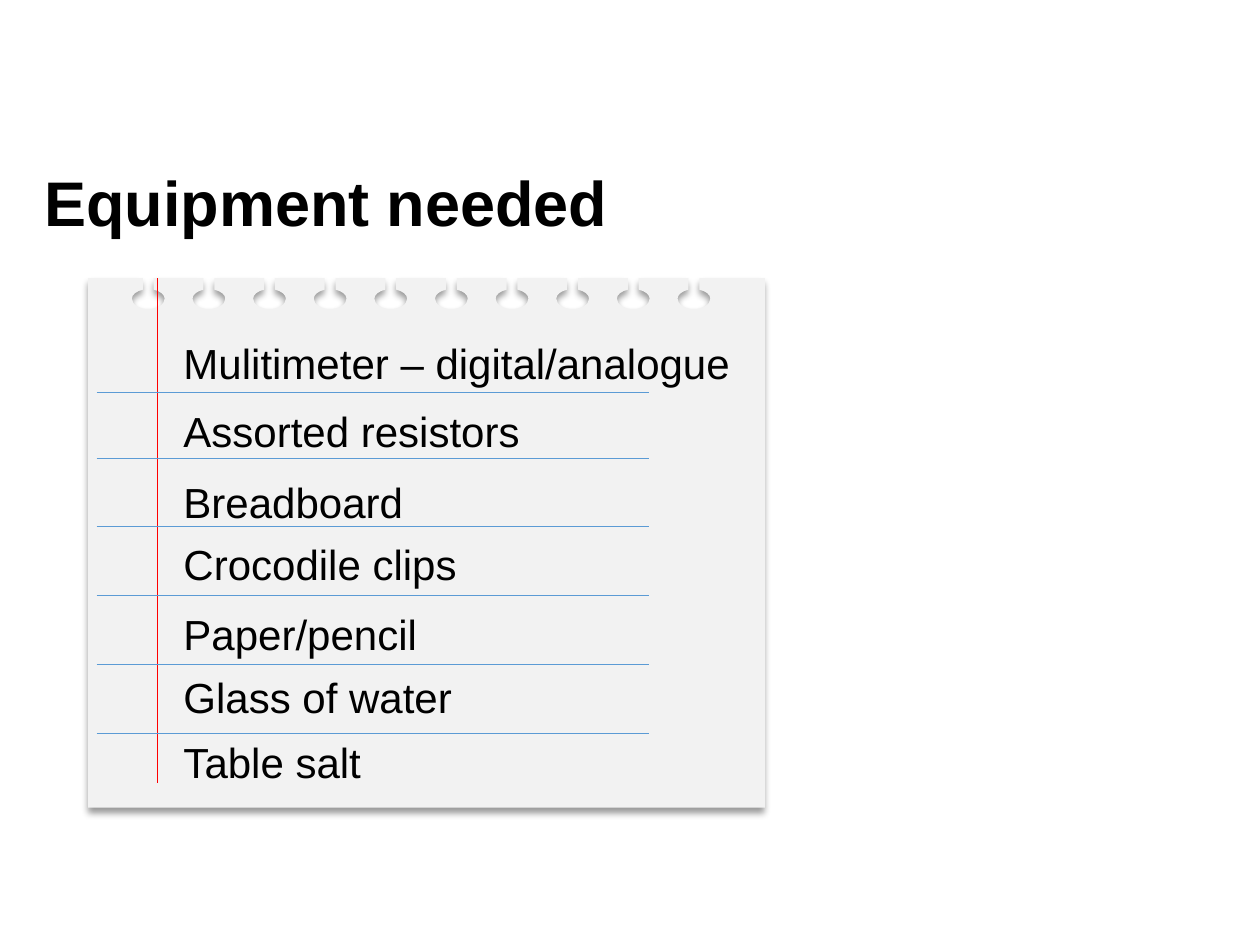
from lxml import etree
from pptx import Presentation
from pptx.dml.color import RGBColor
from pptx.enum.shapes import MSO_CONNECTOR as Connector
from pptx.enum.text import MSO_ANCHOR as Anchor, MSO_AUTO_SIZE as AutoSize, PP_ALIGN as Align
from pptx.oxml import parse_xml
from pptx.oxml.ns import nsdecls, qn
from pptx.util import Cm, Pt


def color(hex_string):
    return RGBColor.from_string(hex_string)


def add_rule(x1, y1, x2, y2, hex_string):
    """Draw a thin line on the notepad, in centimetres."""
    rule = page.shapes.add_connector(Connector.STRAIGHT, Cm(x1), Cm(y1), Cm(x2), Cm(y2))
    rule.line.color.rgb = color(hex_string)
    rule.line.width = Pt(0.5)
    etree.SubElement(rule._element.spPr, qn("a:effectLst"))


deck = Presentation()
deck.slide_width, deck.slide_height = Cm(25.4), Cm(19.05)
page = deck.slides.add_slide(deck.slide_layouts[5])

# Title
title = page.shapes.title
title.left, title.top, title.width, title.height = Cm(0.64), Cm(3.21), Cm(15.29), Cm(1.88)
title.text_frame.text = "Equipment needed"
title.text_frame.vertical_anchor = Anchor.MIDDLE
para = title.text_frame.paragraphs[0]
para.alignment = Align.LEFT
para.line_spacing = 0.9
para.font.name, para.font.size, para.font.bold = "Arial", Pt(36), True
para.font.color.rgb = color("000000")

# Notepad sheet with torn binding holes along its top edge
left, top, right, bottom = 1.78, 5.61, 15.42, 16.28
hole_count, first_hole, last_hole = 10, 2.99, 13.99
# Left half of a hole, relative to its centre line and the sheet's top edge:
# the slot, then two curves of two control points and an end point each
half = [(-0.11, 0), (-0.11, 0.23),
        (-0.24, 0.26), (-0.33, 0.33), (-0.33, 0.41),
        (-0.33, 0.53), (-0.18, 0.62), (0, 0.62)]
hole_points = half + [(-x, y) for x, y in reversed(half[:-1])]
outline = []
for hole in range(hole_count):
    hole_x = first_hole + hole * (last_hole - first_hole) / (hole_count - 1)
    outline += [(hole_x + x, top + y) for x, y in hole_points]
outline += [(right, top), (right, bottom), (left, bottom)]

builder = page.shapes.build_freeform(Cm(left), Cm(top))
builder.add_line_segments([(Cm(x), Cm(y)) for x, y in outline], close=True)
sheet = builder.convert_to_shape()

# Turn the points of each hole's four curves into Bézier segments
segments = list(sheet._element.iter(qn("a:lnTo")))
for hole in range(hole_count):
    first = hole * len(hole_points) + 2
    for start in range(first, first + 12, 3):
        curve = etree.Element(qn("a:cubicBezTo"))
        segments[start].addprevious(curve)
        for segment in segments[start:start + 3]:
            curve.append(segment[0])
            segment.getparent().remove(segment)

sheet.fill.solid()
sheet.fill.fore_color.rgb = color("F2F2F2")
sheet.line.fill.background()
sheet.shadow.inherit = False
sheet._element.spPr.find(qn("a:effectLst")).append(parse_xml(
    f'<a:outerShdw {nsdecls("a")} blurRad="{Pt(4)}" dist="{Pt(3)}" dir="5400000" '
    'algn="t" rotWithShape="0"><a:srgbClr val="000000"><a:alpha val="40000"/>'
    '</a:srgbClr></a:outerShdw>'))

# Margin and ruled lines
add_rule(3.18, top, 3.18, 15.78, "FF0000")
for y in (7.91, 9.25, 10.62, 12.01, 13.4, 14.79):
    add_rule(1.95, y, 13.08, y, "5B9BD5")

# Equipment list: text, top and width of each entry
entries = [
    ("Mulitimeter – digital/analogue", 6.67, 13.31),
    ("Assorted resistors", 8.05, 10.74),
    ("Breadboard", 9.48, 10.74),
    ("Crocodile clips", 10.73, 9.04),
    ("Paper/pencil", 12.14, 9.68),
    ("Glass of water", 13.41, 9.68),
    ("Table salt", 14.73, 9.68),
]
for text, entry_top, width in entries:
    box = page.shapes.add_textbox(Cm(3.45), Cm(entry_top), Cm(width), Cm(1.28))
    box.text_frame.word_wrap = True
    box.text_frame.auto_size = AutoSize.SHAPE_TO_FIT_TEXT
    box.text_frame.text = text
    para = box.text_frame.paragraphs[0]
    para.font.name, para.font.size = "Arial", Pt(24)
    para.font.color.rgb = color("000000")

deck.save("out.pptx")
